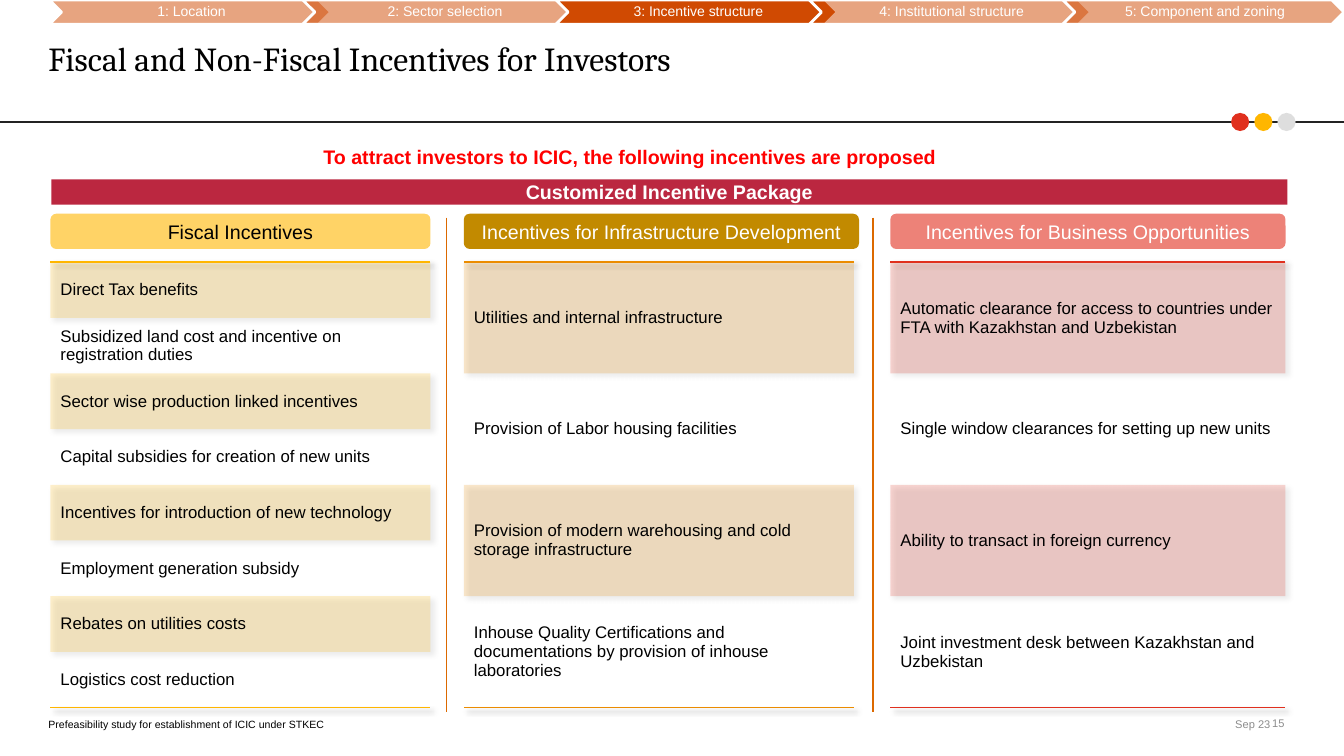
from lxml import etree
from pptx import Presentation
from pptx.dml.color import RGBColor
from pptx.enum.shapes import MSO_CONNECTOR, MSO_SHAPE
from pptx.enum.text import MSO_ANCHOR, PP_ALIGN
from pptx.oxml.ns import qn
from pptx.util import Inches, Pt

LEFT, CENTER, RIGHT = PP_ALIGN.LEFT, PP_ALIGN.CENTER, PP_ALIGN.RIGHT
TOP, MIDDLE, BOTTOM = MSO_ANCHOR.TOP, MSO_ANCHOR.MIDDLE, MSO_ANCHOR.BOTTOM
RECT, ROUNDED = MSO_SHAPE.RECTANGLE, MSO_SHAPE.ROUNDED_RECTANGLE
OVAL, CHEVRON = MSO_SHAPE.OVAL, MSO_SHAPE.CHEVRON
STRAIGHT = MSO_CONNECTOR.STRAIGHT

# Content
TITLE = "Fiscal and Non-Fiscal Incentives for Investors"
LEAD = "To attract investors to ICIC, the following incentives are proposed"
BANNER = "Customized Incentive Package"
FOOTER, DATE, PAGE_NUMBER = (
    "Prefeasibility study for establishment of ICIC under STKEC", "Sep 23", "15")
STEPS = ["1: Location", "2: Sector selection", "3: Incentive structure",
         "4: Institutional structure", "5: Component and zoning"]
CURRENT_STEP = 2
DOTS = ["E0301E", "FFB600", "DEDEDE"]
COLUMNS = [
    dict(heading="Fiscal Incentives", left=0.5, width=3.77, table_width=3.77,
         fill="FFD366", text="000000", accent="FFB600",
         rows=["Direct Tax benefits",
               "Subsidized land cost and incentive on registration duties",
               "Sector wise production linked incentives",
               "Capital subsidies for creation of new units",
               "Incentives for introduction of new technology",
               "Employment generation subsidy",
               "Rebates on utilities costs",
               "Logistics cost reduction"]),
    dict(heading="Incentives for Infrastructure Development", left=4.6, width=3.92,
         table_width=3.87, fill="C28A00", text="FFFFFF", accent="EB8C00",
         rows=["Utilities and internal infrastructure",
               "Provision of Labor housing facilities",
               "Provision of modern warehousing and cold storage infrastructure",
               "Inhouse Quality Certifications and documentations by provision "
               "of inhouse laboratories"]),
    dict(heading="Incentives for Business Opportunities", left=8.83, width=3.92,
         table_width=3.92, fill="ED8278", text="FFFFFF", accent="E0301E",
         rows=["Automatic clearance for access to countries under FTA with "
               "Kazakhstan and Uzbekistan",
               "Single window clearances for setting up new units",
               "Ability to transact in foreign currency",
               "Joint investment desk between Kazakhstan and Uzbekistan"]),
]
DIVIDERS = [4.43, 8.66]

THEME = dict(
    black="000000", white="FFFFFF", red="FF0000", crimson="BB2740", rule="232323",
    divider="DC6900", step="D04A02", gray="8C8C8C", body="Arial", heading="Cambria",
    title=24, lead=14, cell=12, step_size=10, date=7.9, footer=7.5)
NO_GRID_STYLE = "{2D5ABB26-0587-4C30-8999-92F81FD0307C}"
TABLE_TOP, TABLE_HEIGHT = 2.6, 4.42

deck = Presentation()
deck.slide_width, deck.slide_height = Inches(13.33), Inches(7.5)
page = deck.slides.add_slide(deck.slide_layouts[6])


def child(parent, tag, **attributes):
    return etree.SubElement(parent, qn(tag), attributes)


def set_alpha(fill, percent):
    color = fill._xPr.find(qn("a:solidFill"))[0]
    child(color, "a:alpha", val=str(percent * 1000))


def write(frame, text, size, color, align=LEFT, anchor=MIDDLE,
          margins=(0, 0, 0, 0), bold=False, font=THEME["body"]):
    frame.word_wrap = True
    frame.vertical_anchor = anchor
    (frame.margin_left, frame.margin_top,
     frame.margin_right, frame.margin_bottom) = map(Inches, margins)
    para = frame.paragraphs[0]
    para.alignment = align
    span = para.add_run()
    span.text = text
    span.font.size, span.font.name, span.font.bold = Pt(size), font, bold
    span.font.color.rgb = RGBColor.from_string(color)
    return para


def add_text(area, *args, **options):
    box = page.shapes.add_textbox(*map(Inches, area))
    return write(box.text_frame, *args, **options)


def add_block(kind, area, fill, outline=None):
    block = page.shapes.add_shape(kind, *map(Inches, area))
    block.shadow.inherit = False
    block.fill.solid()
    block.fill.fore_color.rgb = RGBColor.from_string(fill)
    if outline:
        block.line.color.rgb = RGBColor.from_string(outline)
        block.line.width = Pt(2)
    else:
        block.line.fill.background()
    return block


def add_line(start, end, color, width):
    line = page.shapes.add_connector(STRAIGHT, *map(Inches, start + end))
    line.line.color.rgb = RGBColor.from_string(color)
    line.line.width = Pt(width)
    child(line._element.spPr, "a:effectLst")


def add_border(cell, side, color):
    border = etree.Element(qn(side), w=str(Pt(1)))
    child(child(border, "a:solidFill"), "a:srgbClr", val=color)
    cell._tc.get_or_add_tcPr().insert(0, border)


def add_incentives(column):
    rows, accent = column["rows"], column["accent"]
    frame = page.shapes.add_table(
        len(rows), 1, Inches(column["left"]), Inches(TABLE_TOP),
        Inches(column["table_width"]), Inches(TABLE_HEIGHT))
    table = frame.table
    table.first_row = table.horz_banding = False
    properties = table._tbl.tblPr
    properties.find(qn("a:tableStyleId")).text = NO_GRID_STYLE
    # Soft shadow of the table
    effects = etree.Element(qn("a:effectLst"))
    shadow = child(effects, "a:outerShdw", blurRad="50800", dist="38100",
                   dir="2700000", algn="tl", rotWithShape="0")
    child(child(shadow, "a:prstClr", val="black"), "a:alpha", val="40000")
    properties.insert(0, effects)
    for index, text in enumerate(rows):
        table.rows[index].height = Inches(TABLE_HEIGHT / len(rows))
        cell = table.cell(index, 0)
        cell.vertical_anchor = MIDDLE
        span = cell.text_frame.paragraphs[0].add_run()
        span.text = text
        span.font.size, span.font.name = Pt(THEME["cell"]), THEME["body"]
        span.font.color.rgb = RGBColor.from_string(THEME["black"])
        if index % 2 == 0:
            cell.fill.solid()
            cell.fill.fore_color.rgb = RGBColor.from_string(accent)
            set_alpha(cell.fill, 20)
        else:
            cell.fill.background()
    add_border(table.cell(0, 0), "a:lnT", accent)
    add_border(table.cell(len(rows) - 1, 0), "a:lnB", accent)


# Title rule and dots
add_line((0, 1.21), (13.33, 1.21), THEME["rule"], 2)
for index, color in enumerate(DOTS):
    add_block(OVAL, (12.21 + 0.23 * index, 1.12, 0.18, 0.18), color)

# Title, lead sentence and banner
add_text((0.48, 0.38, 12.36, 0.4), TITLE, THEME["title"], THEME["black"],
         font=THEME["heading"])
add_text((0.48, 1.44, 11.54, 0.25), LEAD, THEME["lead"], THEME["red"],
         CENTER, TOP, bold=True)
banner = add_block(RECT, (0.51, 1.78, 12.26, 0.25), THEME["crimson"])
write(banner.text_frame, BANNER, THEME["lead"], THEME["white"], CENTER,
      margins=(0.1, 0.05, 0.1, 0.05), bold=True)

# Step trail
for index, step in enumerate(STEPS):
    left = 0.49 + 2.5125 * index
    arrow = add_block(CHEVRON, (left, 0, 2.79, 0.24), THEME["step"], THEME["white"])
    if index != CURRENT_STEP:
        set_alpha(arrow.fill, 50)
    label = add_text((left + 0.12, 0, 2.55, 0.24), step, THEME["step_size"],
                     THEME["white"], CENTER, margins=(0.04, 0.01, 0.01, 0.01))
    label.line_spacing = 0.9

# Incentive columns
for column in COLUMNS:
    add_incentives(column)
    heading = add_block(ROUNDED, (column["left"], 2.12, column["width"], 0.35),
                        column["fill"])
    write(heading.text_frame, column["heading"], THEME["lead"], column["text"], CENTER)
for x in DIVIDERS:
    add_line((x, 2.16), (x, 7.06), THEME["divider"], 1)

# Footer
add_text((0.48, 7.1, 5.99, 0.15), FOOTER, THEME["footer"], THEME["black"], anchor=BOTTOM)
add_text((10.67, 7.1, 1.93, 0.15), DATE, THEME["date"], THEME["gray"], RIGHT, BOTTOM)
add_text((10.92, 7.1, 1.93, 0.15), PAGE_NUMBER, THEME["date"], THEME["gray"], RIGHT,
         margins=(0.11, 0.06, 0.11, 0.06))

deck.save("out.pptx")
